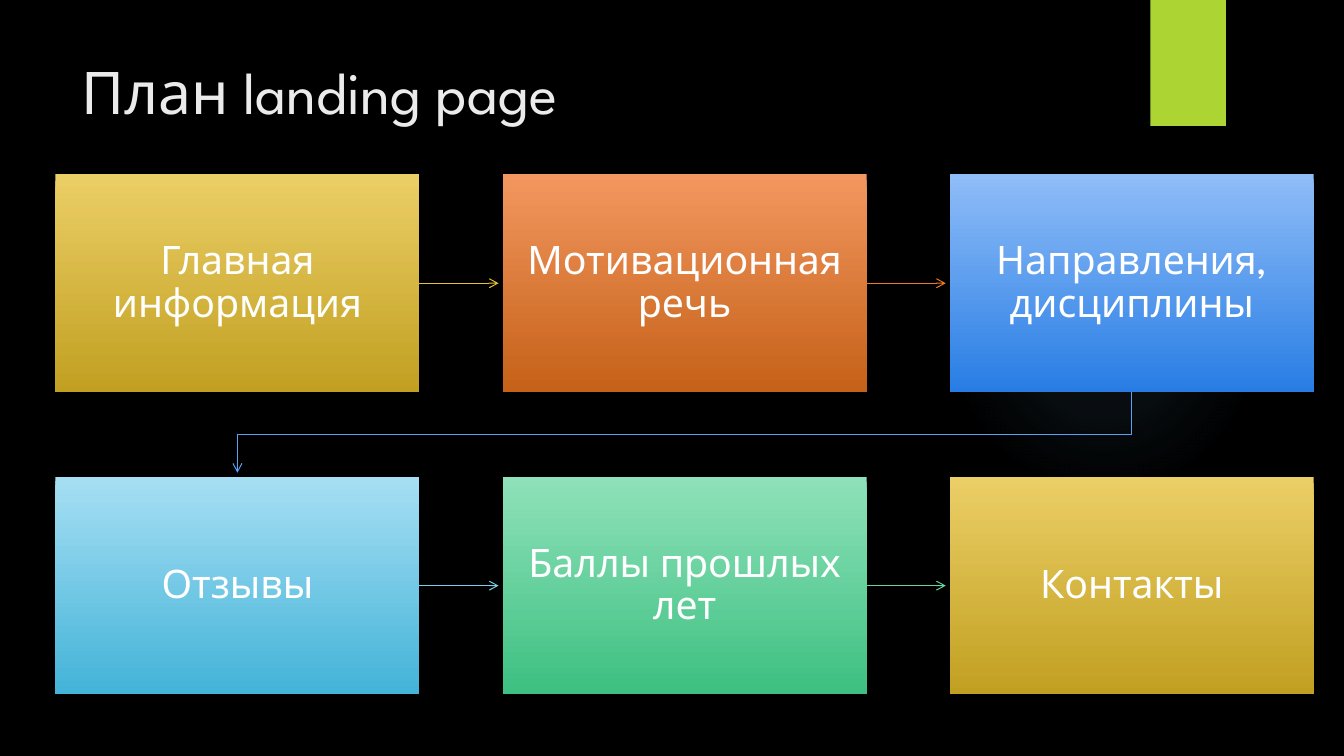
import pptx
import pptx.dml.color
import pptx.enum.shapes
import pptx.enum.text
import pptx.oxml
import pptx.oxml.ns
import pptx.util
from lxml import etree

Inches = pptx.util.Inches
RGBColor = pptx.dml.color.RGBColor
SHAPE = pptx.enum.shapes.MSO_SHAPE
ANCHOR = pptx.enum.text.MSO_ANCHOR
ALIGN = pptx.enum.text.PP_ALIGN
qn = pptx.oxml.ns.qn

BLACK = RGBColor(0x00, 0x00, 0x00)
WHITE = RGBColor(0xFF, 0xFF, 0xFF)
OFF_WHITE = RGBColor(0xEB, 0xEB, 0xEB)
LIME = RGBColor(0xAC, 0xD4, 0x33)
GLOW = RGBColor(0x7A, 0xC4, 0xF0)

# Each palette: top of the gradient, bottom of the gradient, outgoing arrow
GOLD = RGBColor(0xEB, 0xCE, 0x66), RGBColor(0xC1, 0xA0, 0x21), RGBColor(0xE6, 0xC1, 0x33)
ORANGE = RGBColor(0xF2, 0x97, 0x5F), RGBColor(0xC5, 0x61, 0x18), RGBColor(0xEF, 0x7A, 0x24)
BLUE = RGBColor(0x8F, 0xBD, 0xF8), RGBColor(0x28, 0x7D, 0xE4), RGBColor(0x5A, 0xA0, 0xF5)
SKY = RGBColor(0xA6, 0xDF, 0xF3), RGBColor(0x43, 0xB3, 0xD8), RGBColor(0x75, 0xCE, 0xEC)
GREEN = RGBColor(0x8F, 0xE1, 0xB9), RGBColor(0x3D, 0xC0, 0x81), RGBColor(0x65, 0xD6, 0xA0)

STEPS = [
    ("Главная информация", GOLD),
    ("Мотивационная речь", ORANGE),
    ("Направления, дисциплины", BLUE),
    ("Отзывы", SKY),
    ("Баллы прошлых лет", GREEN),
    ("Контакты", GOLD),
]
COLUMNS = 3
LEFT, TOP = 0.55, 1.73
BOX_W, BOX_H = 3.61, 2.16
STEP_X, STEP_Y = (9.42 - LEFT) / 2, 3.0
ARROW_GAP = 0.04


def write(tf, text, font="League Spartan", size=28, color=WHITE,
          align=ALIGN.CENTER, anchor=ANCHOR.MIDDLE, spacing=0.9, inset=None):
    tf.word_wrap = True
    tf.auto_size = pptx.enum.text.MSO_AUTO_SIZE.NONE
    tf.vertical_anchor = anchor
    if inset is not None:
        tf.margin_left = tf.margin_right = Inches(inset)
        tf.margin_top = tf.margin_bottom = Inches(inset)
    p = tf.paragraphs[0]
    p.alignment = align
    p.line_spacing = spacing
    r = p.add_run()
    r.text = text
    r.font.name = font
    r.font.size = pptx.util.Pt(size)
    r.font.color.rgb = color


class Deck:
    def __init__(self):
        self.prs = pptx.Presentation()
        self.prs.slide_width = Inches(13.33)
        self.prs.slide_height = Inches(7.5)
        self.s = self.prs.slides.add_slide(self.prs.slide_layouts[5])
        self.s.background.fill.solid()
        self.s.background.fill.fore_color.rgb = BLACK

    def title(self, text, x, y, w, h):
        sp = self.s.shapes.title
        sp.left, sp.top, sp.width, sp.height = map(Inches, (x, y, w, h))
        write(sp.text_frame, text, size=42, color=OFF_WHITE,
              align=ALIGN.LEFT, anchor=ANCHOR.TOP, spacing=1.0)

    def shape(self, kind, x, y, w, h):
        sp = self.s.shapes.add_shape(kind, *map(Inches, (x, y, w, h)))
        sp.shadow.inherit = False
        sp.line.fill.background()
        return sp

    def block(self, x, y, w, h, color):
        sp = self.shape(SHAPE.RECTANGLE, x, y, w, h)
        sp.fill.solid()
        sp.fill.fore_color.rgb = color

    def glow(self, x, y, size, color):
        """Add a circle that fades out from its centre."""
        sp = self.shape(SHAPE.OVAL, x, y, size, size)
        stops = "".join(
            f'<a:gs pos="{pos}000"><a:srgbClr val="{color}">'
            f'<a:alpha val="{alpha}000"/></a:srgbClr></a:gs>'
            for pos, alpha in ((0, 7), (36, 6), (69, 0), (100, 0)))
        fill = pptx.oxml.parse_xml(
            f'<a:gradFill {pptx.oxml.ns.nsdecls("a")}><a:gsLst>{stops}</a:gsLst>'
            '<a:path path="circle"><a:fillToRect l="50000" t="50000" r="50000" b="50000"/>'
            '</a:path></a:gradFill>')
        sp._element.spPr.find(qn("a:prstGeom")).addnext(fill)

    def box(self, text, x, y, top_color, bottom_color):
        sp = self.shape(SHAPE.RECTANGLE, x, y, BOX_W, BOX_H)
        sp.fill.gradient()
        sp.fill.gradient_angle = 270
        for stop, color in zip(sp.fill.gradient_stops, (top_color, bottom_color)):
            stop.color.rgb = color
        write(sp.text_frame, text, inset=0.22)

    def arrow_line(self, sp, color):
        """Give a line its colour, width and arrowhead."""
        sp.line.color.rgb = color
        sp.line.width = pptx.util.Pt(0.75)
        etree.SubElement(sp.line._get_or_add_ln(), qn("a:tailEnd"), type="arrow")

    def arrow(self, x1, y1, x2, y2, color):
        sp = self.s.shapes.add_connector(
            pptx.enum.shapes.MSO_CONNECTOR.STRAIGHT, *map(Inches, (x1, y1, x2, y2)))
        self.arrow_line(sp, color)
        etree.SubElement(sp._element.spPr, qn("a:effectLst"))

    def bent_arrow(self, points, color):
        points = [(Inches(x), Inches(y)) for x, y in points]
        builder = self.s.shapes.build_freeform(*points[0])
        builder.add_line_segments(points[1:], close=False)
        sp = builder.convert_to_shape()
        sp.shadow.inherit = False
        sp.fill.background()
        self.arrow_line(sp, color)


def main():
    deck = Deck()
    deck.glow(9.41, 1.83, 3.08, GLOW)
    deck.block(11.41, 0, 0.75, 1.25, LIME)
    deck.title("План landing page", 0.71, 0.5, 10.29, 1.53)

    for i, (text, (top_color, bottom_color, arrow_color)) in enumerate(STEPS):
        row, col = divmod(i, COLUMNS)
        x, y = LEFT + col * STEP_X, TOP + row * STEP_Y
        deck.box(text, x, y, top_color, bottom_color)
        if col < COLUMNS - 1:
            middle = y + BOX_H / 2
            deck.arrow(x + BOX_W, middle, x + STEP_X - ARROW_GAP, middle, arrow_color)
        elif i < len(STEPS) - 1:
            start, end = x + BOX_W / 2, LEFT + BOX_W / 2
            bottom, next_top = y + BOX_H, y + STEP_Y
            turn = (bottom + next_top) / 2
            deck.bent_arrow([(start, bottom), (start, turn), (end, turn),
                             (end, next_top - ARROW_GAP)], arrow_color)

    deck.prs.save("out.pptx")


if __name__ == "__main__":
    main()
